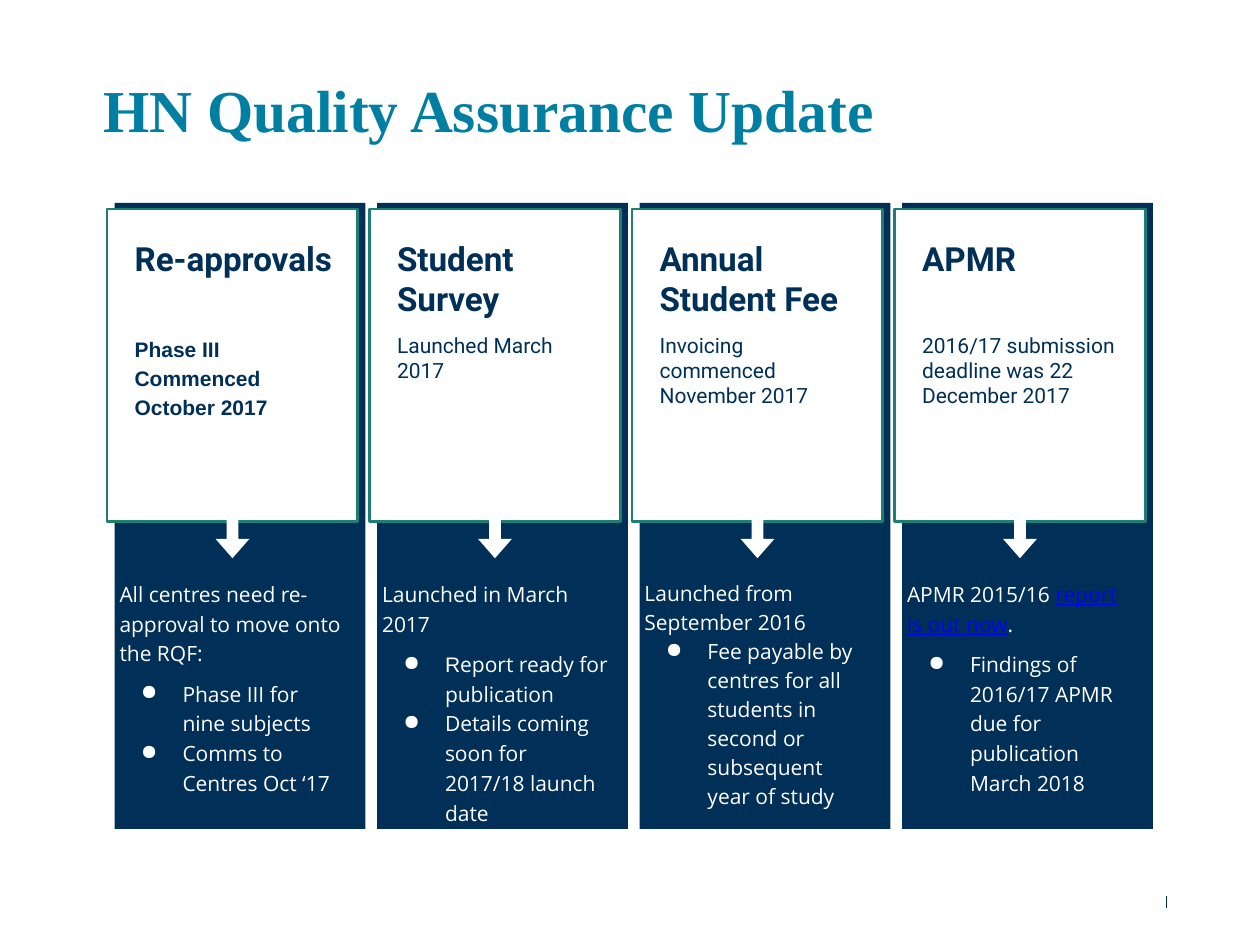
from lxml import etree
from pptx import Presentation
from pptx.dml.color import RGBColor
from pptx.enum.shapes import MSO_CONNECTOR, MSO_SHAPE
from pptx.enum.text import MSO_ANCHOR, MSO_AUTO_SIZE, PP_ALIGN
from pptx.oxml.ns import qn
from pptx.util import Inches, Pt

RECTANGLE = MSO_SHAPE.RECTANGLE
RIGHT_ARROW = MSO_SHAPE.RIGHT_ARROW
STRAIGHT = MSO_CONNECTOR.STRAIGHT
LEFT = PP_ALIGN.LEFT
TOP, MIDDLE = MSO_ANCHOR.TOP, MSO_ANCHOR.MIDDLE
NO_AUTOFIT = MSO_AUTO_SIZE.NONE

COLORS = {"navy": "003057", "teal": "007FA3", "green": "1D7E74",
          "white": "FFFFFF", "link": "0000FF"}

# Four equal columns
FIRST_LEFT, LAST_LEFT, COLUMN_WIDTH = 0.85, 7.10, 1.99
PITCH = (LAST_LEFT - FIRST_LEFT) / 3
PANEL_SHIFT, TEXT_SHIFT, TEXT_WIDTH = 0.06, 0.12, 1.78
ARROW_LENGTH, ARROW_WIDTH = 0.39, 0.27

COLUMNS = [
    {"heading": "Re-approvals",
     "status": ["Phase III", "Commenced October 2017"],
     "status_format": {"font": "Arial", "bold": True, "spacing": 1.15},
     "intro": "All centres need re-approval to move onto the RQF:",
     "bullets": ["Phase III for nine subjects", "Comms to Centres Oct ‘17"]},
    {"heading": "Student Survey",
     "status": ["Launched March 2017"],
     "intro": "Launched in March 2017",
     "bullets": [[("R", {"font": "Arial"}), ("eport ready for publication", {})],
                 "Details coming soon for 2017/18 launch date"]},
    {"heading": "Annual Student Fee",
     "status": ["Invoicing commenced November 2017"],
     "intro": "Launched from September 2016",
     "bullets": ["Fee payable by centres for all students in second or "
                 "subsequent year of study"],
     "spacing": 1.15, "bullet_gap": 0},
    {"heading": "APMR",
     "status": ["2016/17 submission deadline was 22 December 2017"],
     "intro": [("APMR 2015/16 ", {}),
               ("report is out now", {"color": "link", "underline": True}),
               (".", {})],
     "bullets": ["Findings of 2016/17 APMR due for publication March 2018"]},
]


def write_text(shape, paragraphs, font="Roboto", size=12, color="navy", bold=False,
               spacing=1.0, anchor=TOP, first_bullet=None, bullet_gap=0):
    """Fill a shape; a paragraph is a string or a list of (text, overrides) runs.

    Paragraphs from index first_bullet on are bulleted.
    """
    frame = shape.text_frame
    frame.word_wrap = True
    frame.auto_size = NO_AUTOFIT
    frame.vertical_anchor = anchor
    frame.margin_left = frame.margin_right = Inches(0.1)
    frame.margin_top = frame.margin_bottom = Inches(0.1)
    for index, content in enumerate(paragraphs):
        paragraph = frame.paragraphs[0] if index == 0 else frame.add_paragraph()
        paragraph.alignment = LEFT
        paragraph.line_spacing = spacing
        paragraph.space_before = Pt(bullet_gap if index == first_bullet else 0)
        if first_bullet is not None and index >= first_bullet:
            properties = paragraph._p.get_or_add_pPr()
            properties.set("marL", str(Inches(0.5)))
            properties.set("indent", str(Inches(-0.33)))
            bullet_color = etree.SubElement(properties, qn("a:buClr"))
            etree.SubElement(bullet_color, qn("a:srgbClr"), val=COLORS[color])
            etree.SubElement(properties, qn("a:buChar"), char="●")
        runs = [(content, {})] if isinstance(content, str) else content
        for text, overrides in runs:
            run = paragraph.add_run()
            run.text = text
            run.font.name = overrides.get("font", font)
            run.font.size = Pt(size)
            run.font.bold = bold
            run.font.underline = overrides.get("underline", False)
            run.font.color.rgb = RGBColor.from_string(
                COLORS[overrides.get("color", color)])


def add_block(kind, left, top, width, height, fill, line=None):
    shape = slide.shapes.add_shape(
        kind, Inches(left), Inches(top), Inches(width), Inches(height))
    shape.shadow.inherit = False
    shape.fill.solid()
    shape.fill.fore_color.rgb = RGBColor.from_string(COLORS[fill])
    if line:
        shape.line.color.rgb = RGBColor.from_string(COLORS[line])
        shape.line.width = Pt(1.5)
    else:
        shape.line.fill.background()
    return shape


presentation = Presentation()
presentation.slide_width = Inches(10)
presentation.slide_height = Inches(7.5)
slide = presentation.slides.add_slide(presentation.slide_layouts[5])

footer_mark = slide.shapes.add_connector(
    STRAIGHT, Inches(9.26), Inches(7.11), Inches(9.26), Inches(7.21))
footer_mark.line.color.rgb = RGBColor.from_string(COLORS["navy"])
footer_mark.line.width = Pt(0.75)
etree.SubElement(footer_mark._element.spPr, qn("a:effectLst"))

title = slide.shapes.title
title.left, title.top = Inches(0.72), Inches(0.19)
title.width, title.height = Inches(7.05), Inches(1.25)
write_text(title, ["HN Quality Assurance Update"], font="Times New Roman", size=34,
           color="teal", bold=True, spacing=1.18, anchor=MIDDLE)

for number, column in enumerate(COLUMNS):
    left = FIRST_LEFT + number * PITCH
    add_block(RECTANGLE, left + PANEL_SHIFT, 1.61, COLUMN_WIDTH, 4.97, "navy")
    add_block(RECTANGLE, left, 1.66, COLUMN_WIDTH, 2.48, "white", line="green")

    text_left = Inches(left + TEXT_SHIFT)
    status = slide.shapes.add_textbox(
        text_left, Inches(2.54), Inches(TEXT_WIDTH), Inches(0.84))
    write_text(status, column["status"], **column.get("status_format", {}))
    heading = slide.shapes.add_textbox(
        text_left, Inches(1.79), Inches(TEXT_WIDTH), Inches(0.67))
    write_text(heading, [column["heading"]], size=19, bold=True)

    arrow = add_block(RIGHT_ARROW, left + (COLUMN_WIDTH - ARROW_LENGTH) / 2, 4.1,
                      ARROW_LENGTH, ARROW_WIDTH, "white")
    arrow.rotation = 90
    arrow.adjustments[0], arrow.adjustments[1] = 0.34, 0.57

    details = slide.shapes.add_textbox(
        Inches(left), Inches(4.48), Inches(COLUMN_WIDTH), Inches(2.09))
    write_text(details, [column["intro"], *column["bullets"]], font="Open Sans",
               color="white", spacing=column.get("spacing", 1.18), first_bullet=1,
               bullet_gap=column.get("bullet_gap", 6))

presentation.save("out.pptx")
